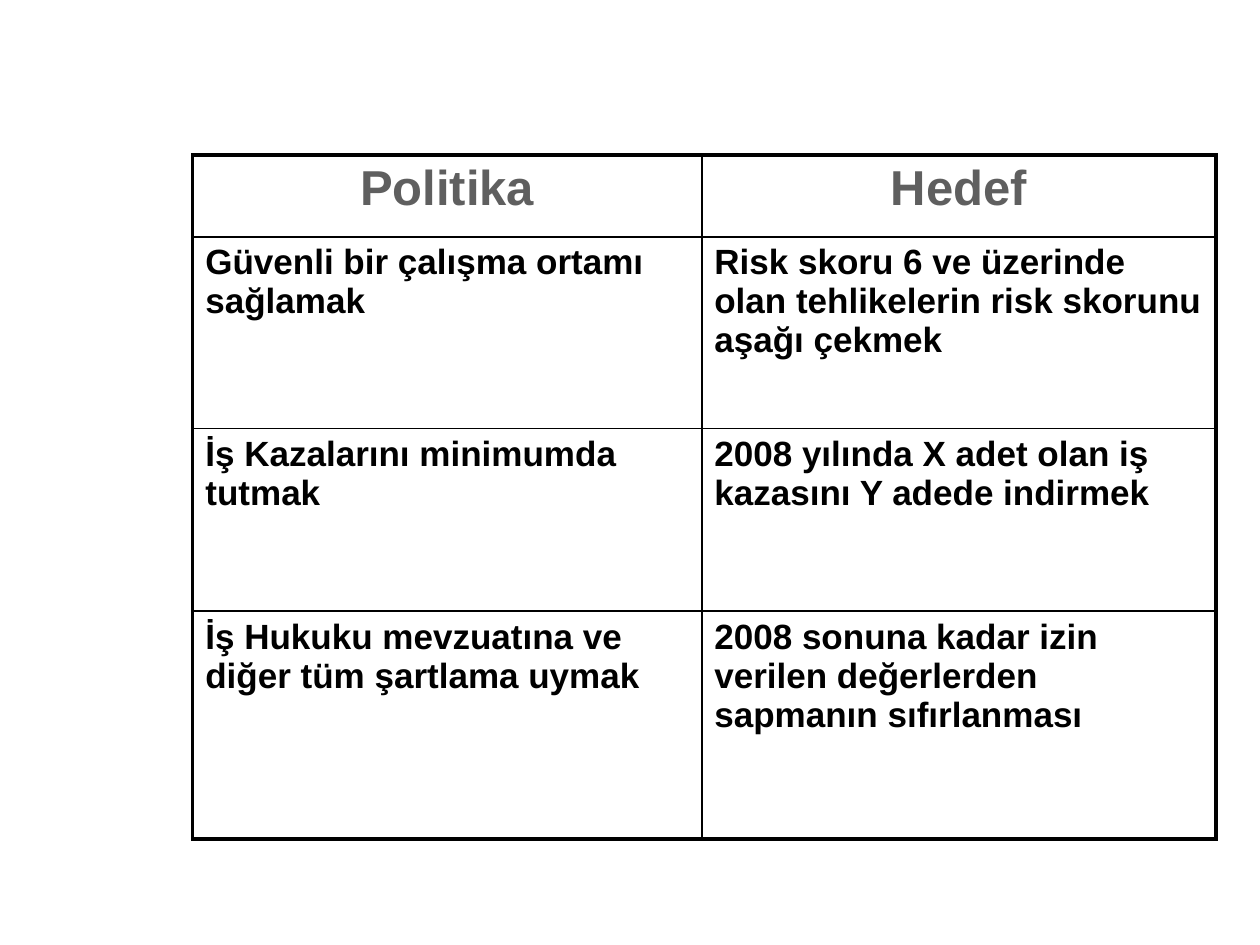
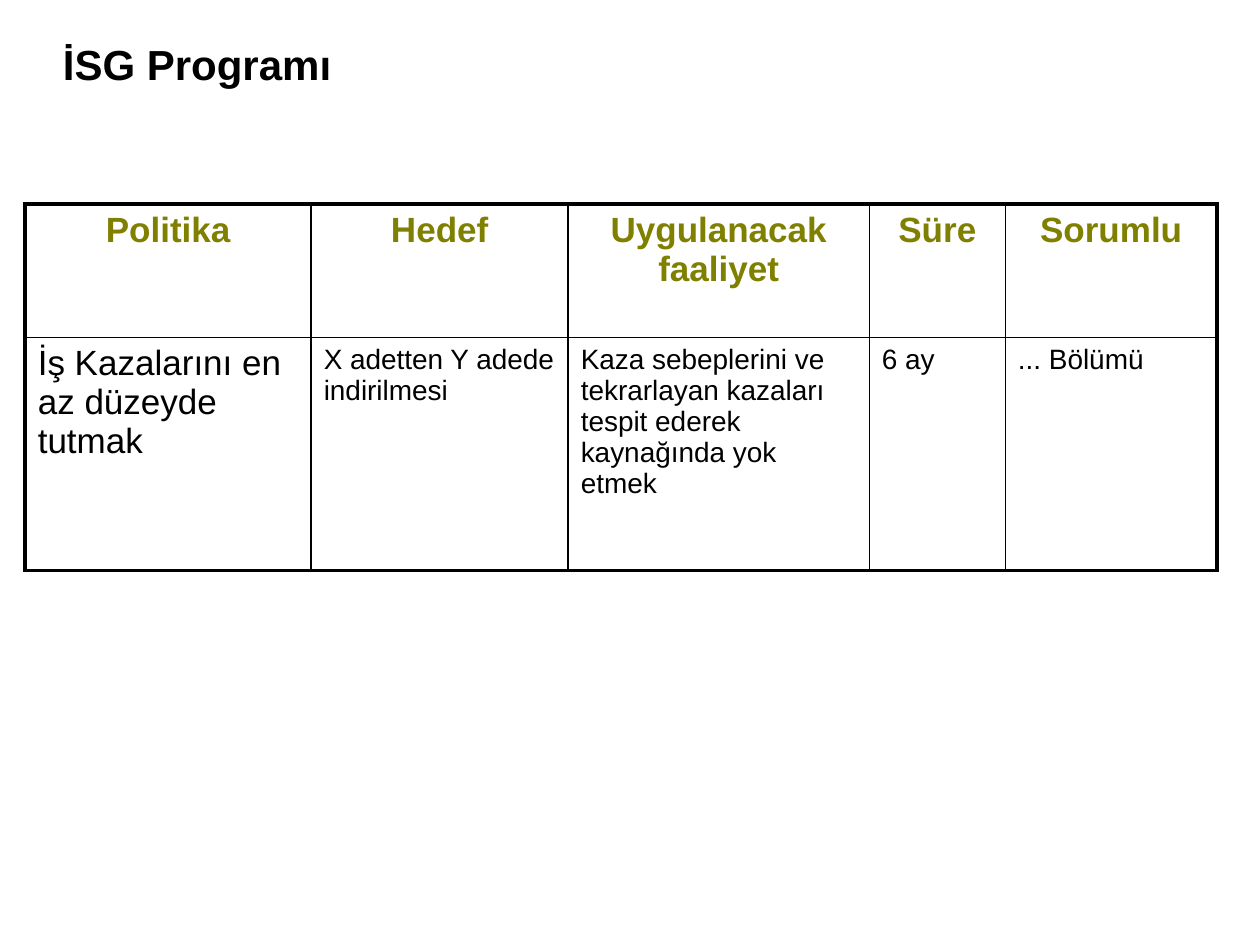
from lxml import etree
from pptx import Presentation
from pptx import util as u
from pptx.dml.color import RGBColor
from pptx.enum import text as tx
from pptx.oxml.ns import qn

FONT = "Arial"
BLACK, GREY, OLIVE = "000000", "5F5F5F", "808000"
WIDE, HIGH = u.Inches(10), u.Inches(7.5)
THIN, THICK = 1, 2.25  # border widths in points


def hue(code):
    return RGBColor.from_string(code)


def across(share):
    """Length as a percentage of the slide's width."""
    return u.Emu(round(WIDE * share / 100))


def down(share):
    """Length as a percentage of the slide's height."""
    return u.Emu(round(HIGH * share / 100))


def write(frame, words, size=20, color=BLACK, bold=False, center=False, lead=None):
    frame.word_wrap = True
    para = frame.paragraphs[0]
    para.alignment = tx.PP_ALIGN.CENTER if center else tx.PP_ALIGN.LEFT
    if lead:
        para.line_spacing = lead
    run = para.add_run()
    run.text = words
    font = run.font
    font.name, font.size, font.bold = FONT, u.Pt(size), bold
    font.color.rgb = hue(color)


def title(slide, words):
    box = slide.shapes.add_textbox(across(5), down(4), across(90), down(16.67))
    frame = box.text_frame
    frame.margin_left = frame.margin_right = 0
    write(frame, words, size=24, bold=True, lead=0.9)


def edge(cell, sides):
    """Draw the four borders; sides maps a border tag to 'is outer'."""
    props = cell._tc.get_or_add_tcPr()
    for spot, (tag, outer) in enumerate(sides.items()):
        line = etree.Element(qn("a:" + tag), w=str(u.Pt(THICK if outer else THIN)))
        fill = etree.SubElement(line, qn("a:solidFill"))
        etree.SubElement(fill, qn("a:srgbClr"), val=BLACK)
        props.insert(spot, line)


def grid(slide, left, top, cols, rows, cells, style):
    """Add a table with a thick frame; style(row, col) gives the text format."""
    frame = slide.shapes.add_table(len(rows), len(cols), across(left), down(top),
                                   across(sum(cols)), down(sum(rows)))
    table = frame.table
    table.first_row = table.horz_banding = False
    for col, share in zip(table.columns, cols):
        col.width = across(share)
    for row, share in zip(table.rows, rows):
        row.height = down(share)
    for r, line in enumerate(cells):
        for c, words in enumerate(line):
            cell = table.cell(r, c)
            cell.fill.background()
            edge(cell, {"lnL": c == 0, "lnR": c == len(cols) - 1,
                        "lnT": r == 0, "lnB": r == len(rows) - 1})
            write(cell.text_frame, words, **style(r, c))


def goal_style(row, col):
    if row == 0:
        return dict(size=28, color=GREY, bold=True, center=True)
    return dict(bold=True)


def plan_style(row, col):
    if row == 0:
        return dict(color=OLIVE, bold=True, center=True)
    return dict(size=20 if col == 0 else 16)


def main():
    deck = Presentation()
    deck.slide_width, deck.slide_height = WIDE, HIGH
    blank = deck.slide_layouts[6]

    # Policies and goals
    goals = deck.slides.add_slide(blank)
    grid(goals, 15.3, 16.4, [40.4, 40.8], [8.67, 20.27, 19.33, 24.13], [
        ["Politika", "Hedef"],
        ["Güvenli bir çalışma ortamı sağlamak",
         "Risk skoru 6 ve üzerinde olan tehlikelerin risk skorunu aşağı çekmek"],
        ["İş Kazalarını minimumda tutmak",
         "2008 yılında X adet olan iş kazasını Y adede indirmek"],
        ["İş Hukuku mevzuatına ve diğer tüm şartlama uymak",
         "2008 sonuna kadar izin verilen değerlerden sapmanın sıfırlanması"],
    ], goal_style)

    # Safety programme
    plan = deck.slides.add_slide(blank)
    title(plan, "İSG Programı")
    grid(plan, 2, 21.6, [22.7, 20.4, 23.9, 10.8, 16.8], [14.13, 24.67], [
        ["Politika", "Hedef", "Uygulanacak faaliyet", "Süre", "Sorumlu"],
        ["İş Kazalarını en az düzeyde tutmak", "X adetten Y adede indirilmesi",
         "Kaza sebeplerini ve tekrarlayan kazaları tespit ederek kaynağında yok etmek",
         "6 ay", "... Bölümü"],
    ], plan_style)

    deck.save("out.pptx")


if __name__ == "__main__":
    main()
